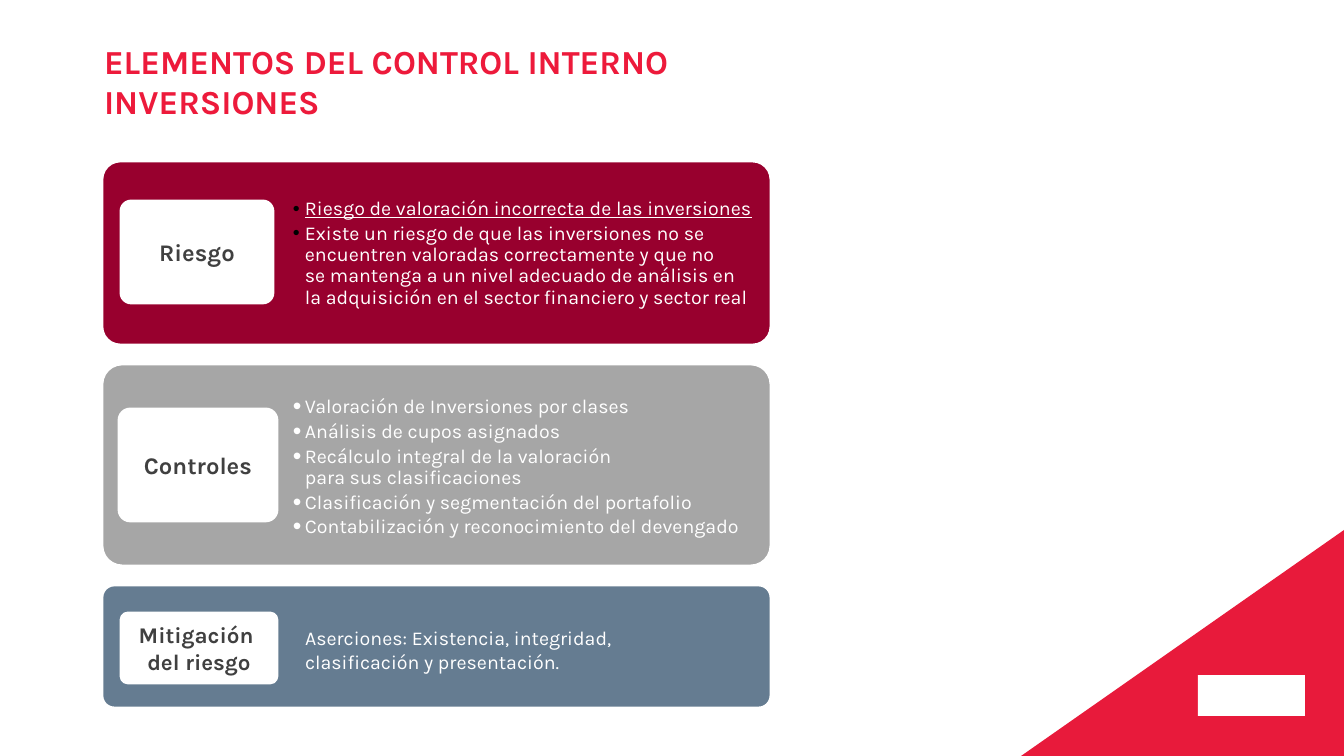
"""Slide on the elements of internal control over investments."""
from copy import deepcopy

from pptx import Presentation
from pptx import util as u
from pptx.dml.color import RGBColor
from pptx.enum import shapes, text
from pptx.oxml import parse_xml
from pptx.oxml.ns import nsdecls, qn

PX = 914400 / 100.8
WHITE = RGBColor(0xFF, 0xFF, 0xFF)
BLACK = RGBColor(0, 0, 0)
TITLE_RED = RGBColor(0xED, 0x1A, 0x3B)
CORNER_RED = RGBColor(0xE8, 0x1A, 0x3B)
WINE = RGBColor(0x98, 0x00, 0x2E)
GREY = RGBColor(0xA6, 0xA6, 0xA6)
SLATE = RGBColor(0x65, 0x7C, 0x91)
DARK = RGBColor(0x40, 0x40, 0x40)


def write(box, lines, size=14, color=WHITE, bold=None, align=text.PP_ALIGN.LEFT,
          anchor=text.MSO_ANCHOR.TOP, bullet=None, bullet_size=100, underlined=None):
    """Fill a shape with one paragraph per line; a newline is a line break."""
    frame = box.text_frame
    frame.word_wrap = True
    frame.vertical_anchor = anchor
    frame.margin_left = frame.margin_right = frame.margin_top = frame.margin_bottom = 0
    for number, line in enumerate(lines):
        para = frame.add_paragraph() if number else frame.paragraphs[0]
        para.text = line
        para.alignment = align
        for span in para.runs:
            font = span.font
            font.name, font.size, font.bold = "Karla", u.Pt(size), bold
            font.color.rgb = color
            if line == underlined:
                font.underline = True
        for line_break in para._p.findall(qn("a:br")):
            line_break.append(deepcopy(para.runs[0]._r.rPr))
        if bullet is not None:
            para.line_spacing = 0.9
            para.space_after = u.Pt(2.5)
            props = para._p.get_or_add_pPr()
            props.set("marL", str(round(12 * PX)))
            props.set("indent", str(round(-12 * PX)))
            for tag in (f'<a:buClr {nsdecls("a")}><a:srgbClr val="{bullet}"/></a:buClr>',
                        f'<a:buSzPct {nsdecls("a")} val="{bullet_size * 1000}"/>',
                        f'<a:buFont {nsdecls("a")} typeface="Arial"/>',
                        f'<a:buChar {nsdecls("a")} char="•"/>'):
                props.append(parse_xml(tag))


def place(kind, area, fill, line=None):
    """Add a preset shape at left, top, width, height in px."""
    shape = page.shapes.add_shape(kind, *(round(side * PX) for side in area))
    shape.shadow.inherit = False
    shape.fill.solid()
    shape.fill.fore_color.rgb = fill
    if line is None:
        shape.line.fill.background()
    else:
        shape.line.color.rgb = line
        shape.line.width = u.Pt(2)
    if kind == shapes.MSO_SHAPE.ROUNDED_RECTANGLE:
        shape.adjustments[0] = 0.1
    return shape


deck = Presentation()
deck.slide_width, deck.slide_height = round(1344 * PX), round(756 * PX)
page = deck.slides.add_slide(deck.slide_layouts[6])

outline = page.shapes.build_freeform(1344, 530, scale=PX)
outline.add_line_segments([(1021, 756), (1344, 756)], close=True)
corner = outline.convert_to_shape()
corner.shadow.inherit = False
corner.fill.solid()
corner.fill.fore_color.rgb = CORNER_RED
corner.line.fill.background()
place(shapes.MSO_SHAPE.RECTANGLE, (1198, 675, 107, 41), WHITE)

title = page.shapes.add_textbox(*(round(side * PX) for side in (104, 41, 752, 113)))
write(title, ["ELEMENTOS DEL CONTROL INTERNO", "INVERSIONES"],
      size=24, color=TITLE_RED, bold=True)

RISK = "Riesgo de valoración incorrecta de las inversiones"
sections = [
    ("Riesgo", 17, WINE, (102, 161, 669, 184), (121, 201, 152, 102), (293, 199, 472, 140),
     [RISK,
      "Existe un riesgo de que las inversiones no se encuentren valoradas correctamente y que no \n"
      "se mantenga a un nivel adecuado de análisis en \n"
      "la adquisición en el sector financiero y sector real"],
     {"bullet": BLACK, "underlined": RISK}),
    ("Controles", 17, GREY, (102, 364, 669, 202), (119, 409, 158, 112), (293, 397, 472, 163),
     ["Valoración de Inversiones por clases",
      "Análisis de cupos asignados",
      "Recálculo integral de la valoración \npara sus clasificaciones",
      "Clasificación y segmentación del portafolio",
      "Contabilización y reconocimiento del devengado"],
     {"bullet": WHITE, "bullet_size": 125}),
    ("Mitigación \ndel riesgo", 16, SLATE, (102, 585, 669, 123), (121, 613, 156, 70),
     (305, 626, 460, 48),
     ["Aserciones: Existencia, integridad, \nclasificación y presentación."], {}),
]
for label, size, color, panel_area, card_area, body_area, lines, style in sections:
    place(shapes.MSO_SHAPE.ROUNDED_RECTANGLE, panel_area, color, WHITE)
    card = place(shapes.MSO_SHAPE.ROUNDED_RECTANGLE, card_area, WHITE, WHITE)
    write(card, [label], size=size, color=DARK, bold=True,
          align=text.PP_ALIGN.CENTER, anchor=text.MSO_ANCHOR.MIDDLE)
    body = page.shapes.add_textbox(*(round(side * PX) for side in body_area))
    write(body, lines, **style)

deck.save("out.pptx")
